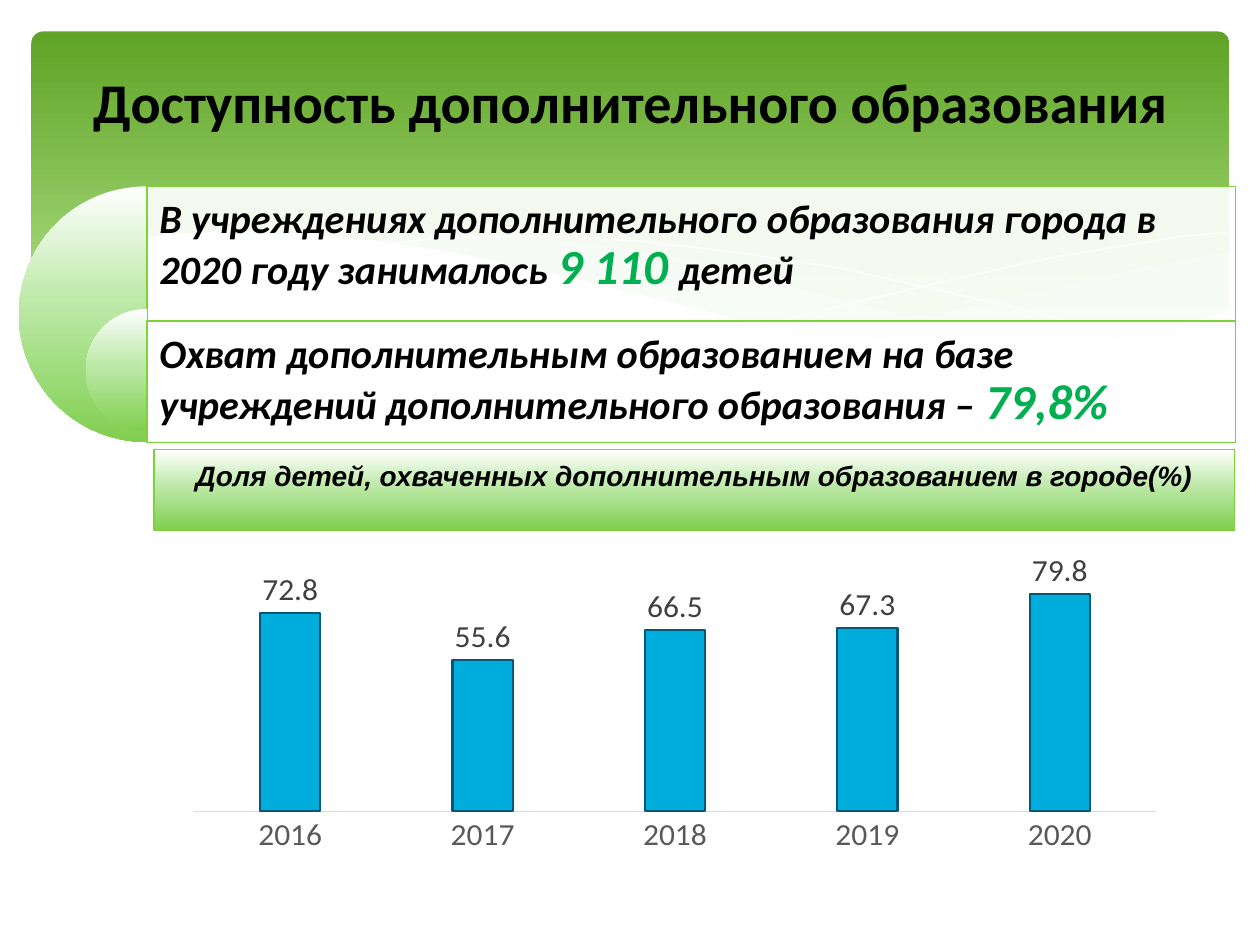
"""Build a slide on access to supplementary education with a coverage chart."""
from lxml import etree
from pptx import Presentation
from pptx import util as u
from pptx.chart.data import CategoryChartData
from pptx.dml.color import RGBColor
from pptx.enum import chart as charts, shapes, text
from pptx.oxml.ns import nsdecls, qn

BLACK = RGBColor(0x00, 0x00, 0x00)
WHITE = RGBColor(0xFF, 0xFF, 0xFF)
ACCENT = RGBColor(0x00, 0xB0, 0x50)
BORDER = RGBColor(0x7F, 0xD1, 0x3B)
MINT = RGBColor(0xBE, 0xEA, 0xAA)
LEAF = RGBColor(0x81, 0xCF, 0x50)
HEADER_DARK = RGBColor(0x5F, 0xA3, 0x26)
HEADER_LIGHT = RGBColor(0xB2, 0xE3, 0x89)
PALE_BLUE = RGBColor(0xD6, 0xEC, 0xFF)
BAR = RGBColor(0x00, 0xAD, 0xDC)
BAR_EDGE = RGBColor(0x00, 0x5A, 0x73)
AXIS_LINE = RGBColor(0xD9, 0xD9, 0xD9)
AXIS_TEXT = RGBColor(0x59, 0x59, 0x59)
LABEL_TEXT = RGBColor(0x40, 0x40, 0x40)
GREEN_FADE = [(0, WHITE), (44, MINT), (100, LEAF)]


def paint(shape, stops, opacity=100, border=None):
    """Fill a shape with one colour or a downward gradient and set its border."""
    shape.shadow.inherit = False
    shape.fill.solid()
    shape.fill.fore_color.rgb = stops[0][1]
    solid = shape._element.spPr.find(qn("a:solidFill"))
    if len(stops) > 1:
        marks = "".join(
            f'<a:gs pos="{position * 1000}"><a:srgbClr val="{color}"/></a:gs>'
            for position, color in stops)
        gradient = etree.fromstring(
            f'<a:gradFill {nsdecls("a")} rotWithShape="1"><a:gsLst>{marks}</a:gsLst>'
            '<a:lin ang="5400000" scaled="0"/></a:gradFill>')
        solid.getparent().replace(solid, gradient)
    elif opacity < 100:
        etree.SubElement(solid[0], qn("a:alpha"), val=str(opacity * 1000))
    if border is None:
        shape.line.fill.background()
    else:
        shape.line.color.rgb = border
        shape.line.width = u.Pt(0.75)


def add_text(paragraph, content, size, font="Calibri", color=BLACK, italic=True):
    """Append a bold run to a paragraph."""
    run = paragraph.add_run()
    run.text = content
    run.font.size = u.Pt(size)
    run.font.name = font
    run.font.bold = True
    run.font.italic = italic
    run.font.color.rgb = color


presentation = Presentation()
presentation.slide_width, presentation.slide_height = u.Pt(720), u.Pt(540)
slide = presentation.slides.add_slide(presentation.slide_layouts[5])

header = slide.shapes.add_shape(
    shapes.MSO_SHAPE.ROUNDED_RECTANGLE, u.Pt(18), u.Pt(18), u.Pt(684.5), u.Pt(194.5))
header.adjustments[0] = 0.034
paint(header, [(0, HEADER_DARK), (90, HEADER_LIGHT)])

right_wave = [
    (702, 144), (653, 153), (620, 161), (561, 174), (508, 185), (476, 191), (518, 195),
    (554, 199), (594, 200), (634, 198), (663, 191), (683, 185), (702, 178)]
middle_wave = [
    (643, 197), (581, 191), (508, 178), (453, 164), (399, 150), (352, 141), (302, 136),
    (248, 133), (206, 138), (246, 143), (291, 152), (323, 160), (382, 173), (433, 184),
    (479, 192), (520, 197), (565, 200), (610, 200)]
long_curve = [
    (222, 140), (241, 137), (279, 135), (324, 135), (367, 138), (419, 144), (479, 153),
    (524, 163), (572, 174), (626, 188), (653, 196)]
short_curve = [
    (441, 185), (484, 174), (539, 161), (602, 147), (645, 140), (675, 135), (702, 133)]
white_wave = [
    (703, 177), (670, 189), (630, 196), (583, 199), (536, 198), (481, 193), (434, 186),
    (381, 172), (322, 158), (263, 145), (210, 137), (166, 133), (127, 132), (95, 134),
    (68, 139), (42, 145), (26, 149), (17, 153), (17, 237), (703, 237)]
for points, color, opacity in [
    (right_wave, PALE_BLUE, 29),
    (middle_wave, PALE_BLUE, 40),
    (long_curve, None, 100),
    (short_curve, None, 100),
    (white_wave, WHITE, 100),
]:
    builder = slide.shapes.build_freeform(*points[0], scale=u.Pt(1))
    builder.add_line_segments(points[1:], close=color is not None)
    wave = builder.convert_to_shape()
    if color is None:
        wave.shadow.inherit = False
        wave.fill.background()
        wave.line.color.rgb = WHITE
        wave.line.width = u.Pt(0)
    else:
        paint(wave, [(0, color)], opacity)

title = slide.shapes.title
title._element.getparent().append(title._element)
title.left, title.top, title.width, title.height = u.Pt(36.5), u.Pt(15), u.Pt(648), u.Pt(85)
title.text_frame.vertical_anchor = text.MSO_ANCHOR.MIDDLE
title.text_frame.paragraphs[0].alignment = text.PP_ALIGN.CENTER
add_text(title.text_frame.paragraphs[0], "Доступность дополнительного образования", 32,
         italic=False)

banner = slide.shapes.add_shape(
    shapes.MSO_SHAPE.RECTANGLE, u.Pt(88), u.Pt(257), u.Pt(617.5), u.Pt(46))
paint(banner, GREEN_FADE, border=BORDER)
banner.text_frame.word_wrap = True
banner.text_frame.vertical_anchor = text.MSO_ANCHOR.TOP
banner.text_frame.margin_top = u.Pt(5)
banner.text_frame.paragraphs[0].alignment = text.PP_ALIGN.CENTER
add_text(banner.text_frame.paragraphs[0],
         "Доля детей, охваченных дополнительным образованием в городе(%)", 16, font="Arial")

for pie_left, pie_top, diameter, panel_top, panel_height, runs in [
    (10.8, 106.5, 146, 106.5, 146, [
        ("В учреждениях дополнительного образования города в 2020 году занималось ", 23, BLACK),
        ("9 110 ", 28, ACCENT),
        ("детей", 23, BLACK)]),
    (49, 176.5, 70, 183.5, 69.5, [
        ("Охват дополнительным образованием на базе учреждений дополнительного образования – ",
         23, BLACK),
        ("79,8%", 28, ACCENT)]),
]:
    pie = slide.shapes.add_shape(
        shapes.MSO_SHAPE.PIE, u.Pt(pie_left), u.Pt(pie_top), u.Pt(diameter), u.Pt(diameter))
    pie.adjustments[0], pie.adjustments[1] = 54, 162
    paint(pie, GREEN_FADE)
    panel = slide.shapes.add_shape(
        shapes.MSO_SHAPE.RECTANGLE, u.Pt(84), u.Pt(panel_top), u.Pt(622), u.Pt(panel_height))
    paint(panel, [(0, WHITE)], 90, BORDER)
    textbox = slide.shapes.add_textbox(u.Pt(84), u.Pt(panel_top), u.Pt(622), u.Pt(69.5))
    frame = textbox.text_frame
    frame.word_wrap = True
    frame.vertical_anchor = text.MSO_ANCHOR.MIDDLE
    frame.margin_left = frame.margin_right = u.Pt(7.2)
    frame.margin_top = frame.margin_bottom = u.Pt(7.2)
    frame.paragraphs[0].line_spacing = 0.9
    for content, size, color in runs:
        add_text(frame.paragraphs[0], content, size, color=color)

coverage = CategoryChartData()
coverage.categories = ["2016", "2017", "2018", "2019", "2020"]
coverage.add_series("Series 1", [72.8, 55.6, 66.5, 67.3, 79.8])
chart = slide.shapes.add_chart(
    charts.XL_CHART_TYPE.COLUMN_CLUSTERED,
    u.Pt(99.5), u.Pt(315.5), u.Pt(572.5), u.Pt(175.5), coverage).chart
chart.has_legend = False
chart.has_title = False
chart.font.size = u.Pt(10)
chart.font.name = "Calibri"
chart.value_axis.visible = False
chart.value_axis.has_major_gridlines = False
chart.value_axis.minimum_scale = 0
chart.value_axis.maximum_scale = 90
category_axis = chart.category_axis
category_axis.major_tick_mark = charts.XL_TICK_MARK.NONE
category_axis.format.line.color.rgb = AXIS_LINE
category_axis.format.line.width = u.Pt(0.75)

plot = chart.plots[0]
plot.gap_width = 219
plot.overlap = -27
plot.vary_by_categories = False
plot.has_data_labels = True
plot.data_labels.show_value = True
plot.data_labels.position = charts.XL_LABEL_POSITION.OUTSIDE_END
for font, color in [
    (category_axis.tick_labels.font, AXIS_TEXT), (plot.data_labels.font, LABEL_TEXT)]:
    font.size = u.Pt(18)
    font.name = "Calibri"
    font.color.rgb = color
columns = plot.series[0].format
columns.fill.solid()
columns.fill.fore_color.rgb = BAR
columns.line.color.rgb = BAR_EDGE
columns.line.width = u.Pt(1.25)

presentation.save("out.pptx")
